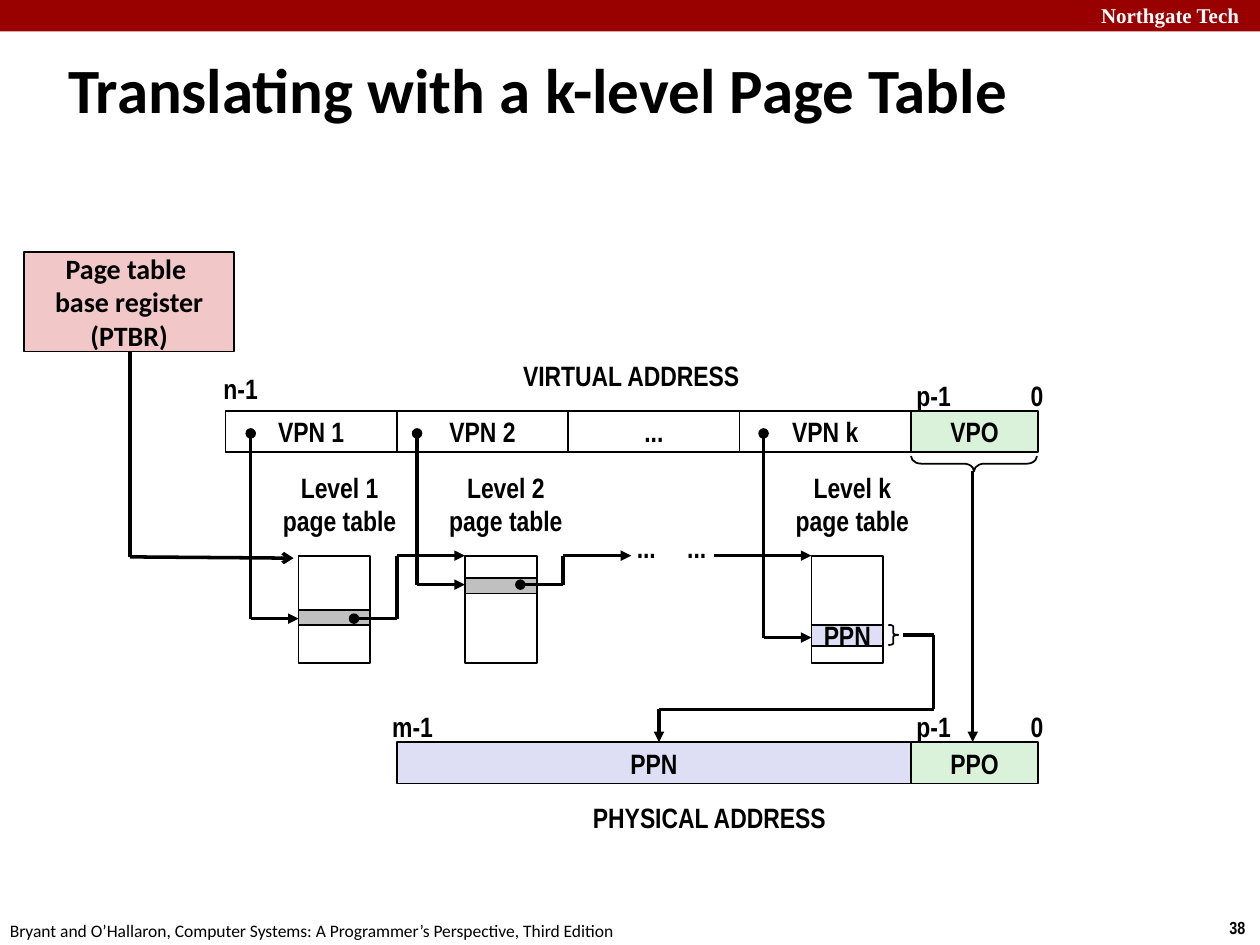
from lxml import etree
from pptx import Presentation
from pptx.dml.color import RGBColor
from pptx.enum.shapes import MSO_CONNECTOR, MSO_SHAPE
from pptx.enum.text import MSO_ANCHOR, MSO_AUTO_SIZE, PP_ALIGN
from pptx.oxml.ns import qn
from pptx.util import Inches, Pt

RECT, BRACE = MSO_SHAPE.RECTANGLE, MSO_SHAPE.RIGHT_BRACE
STRAIGHT = MSO_CONNECTOR.STRAIGHT
LEFT, CENTER = PP_ALIGN.LEFT, PP_ALIGN.CENTER
TOP, MIDDLE = MSO_ANCHOR.TOP, MSO_ANCHOR.MIDDLE
GROW, FIXED = MSO_AUTO_SIZE.SHAPE_TO_FIT_TEXT, MSO_AUTO_SIZE.NONE
TITLE_ONLY = 5

BLACK = RGBColor(0x00, 0x00, 0x00)
WHITE = RGBColor(0xFF, 0xFF, 0xFF)
RED = RGBColor(0x99, 0x00, 0x00)
PINK = RGBColor(0xF1, 0xC7, 0xC7)
GREEN = RGBColor(0xDB, 0xF2, 0xDA)
LILAC = RGBColor(0xDE, 0xDF, 0xF5)
GRAY = RGBColor(0xC0, 0xC0, 0xC0)

BODY, LABEL, SERIF = "Calibri", "Arial Narrow", "Times New Roman"
COLS, ROWS = 100, 75  # square grid cells, a tenth of an inch each


class Diagram:
    """Draws styled elements; every length is in grid columns and rows."""

    def __init__(self, prs):
        self.cell_w = prs.slide_width / COLS
        self.cell_h = prs.slide_height / ROWS
        self.s = prs.slides.add_slide(prs.slide_layouts[TITLE_ONLY])

    def x(self, col):
        return round(col * self.cell_w)

    def y(self, row):
        return round(row * self.cell_h)

    def area(self, col, row, w, h):
        return self.x(col), self.y(row), self.x(w), self.y(h)

    def add_runs(self, tf, text, font=LABEL, size=16, bold=True, color=BLACK,
                 align=CENTER):
        """A newline starts a paragraph, a vertical tab breaks the line."""
        for i, para in enumerate(text.split("\n")):
            p = tf.add_paragraph() if i else tf.paragraphs[0]
            p.alignment = align
            for j, line in enumerate(para.split("\v")):
                if j:
                    p.add_line_break()
                r = p.add_run()
                r.text = line
                r.font.name, r.font.size = font, Pt(size)
                r.font.bold, r.font.color.rgb = bold, color

    def title(self, area, text):
        sp = self.s.shapes.title
        sp.left, sp.top, sp.width, sp.height = self.area(*area)
        tf = sp.text_frame
        tf.vertical_anchor, tf.auto_size = MIDDLE, FIXED
        self.add_runs(tf, text, BODY, 36, align=LEFT)
        pPr = tf.paragraphs[0]._p.get_or_add_pPr()
        pPr.set("marL", str(Inches(0.13)))
        pPr.set("indent", str(-Inches(0.13)))

    def text(self, area, text, wrap=False, anchor=MIDDLE, **style):
        tf = self.s.shapes.add_textbox(*self.area(*area)).text_frame
        tf.word_wrap, tf.auto_size = wrap, GROW
        tf.vertical_anchor = anchor
        self.add_runs(tf, text, **style)

    def box(self, area, text="", fill=None, line=BLACK, wrap=False, **style):
        sp = self.shape(RECT, area, fill, line)
        if text:
            tf = sp.text_frame
            tf.word_wrap, tf.vertical_anchor = wrap, MIDDLE
            self.add_runs(tf, text, **style)

    def shape(self, kind, area, fill=None, line=BLACK):
        sp = self.s.shapes.add_shape(kind, *self.area(*area))
        sp.shadow.inherit = False
        if fill is None:
            sp.fill.background()
        else:
            sp.fill.solid()
            sp.fill.fore_color.rgb = fill
        if line is None:
            sp.line.fill.background()
        else:
            sp.line.color.rgb, sp.line.width = line, Pt(1)
        return sp

    def brace(self, area, curve, rotation=0):
        sp = self.shape(BRACE, area)
        sp.adjustments[0], sp.adjustments[1] = curve, 0.5
        sp.rotation = rotation

    def route(self, *points, head=None, tail="triangle"):
        """Straight legs through the points, with ends on the outer two."""
        last = len(points) - 2
        for i, (a, b) in enumerate(zip(points, points[1:])):
            c = self.s.shapes.add_connector(
                STRAIGHT, self.x(a[0]), self.y(a[1]), self.x(b[0]), self.y(b[1]))
            c.line.color.rgb, c.line.width = BLACK, Pt(2)
            spPr = c.element.spPr
            ln = spPr.find(qn("a:ln"))
            if head and i == 0:
                etree.SubElement(ln, qn("a:headEnd"), type=head)
            if tail and i == last:
                etree.SubElement(ln, qn("a:tailEnd"), type=tail)
            etree.SubElement(spPr, qn("a:effectLst"))


def main():
    prs = Presentation()
    prs.slide_width, prs.slide_height = Inches(10), Inches(7.5)
    d = Diagram(prs)

    # Header band, footer and title
    d.box((0, 0, COLS, 2.5), fill=RED, line=None)
    d.text((86.4, -0.3, 14.3, 3), "Northgate Tech", wrap=True, anchor=TOP,
           font=SERIF, size=12, color=WHITE, align=LEFT)
    d.text((96.6, 72.3, 3.4, 2.7), "38", anchor=TOP, size=10, align=LEFT)
    d.text((-0.2, 72.5, 50.8, 2.7),
           "Bryant and O’Hallaron, Computer Systems: "
           "A Programmer’s Perspective, Third Edition",
           anchor=TOP, font=BODY, size=10, bold=False, align=LEFT)
    d.title((4.4, 2.7, 90.6, 8.6), "Translating with a k-level Page Table")

    # Base register, pointing at the first table
    d.box((1.9, 20, 16.7, 7.9), "Page table \vbase register\n(PTBR)",
          PINK, wrap=True, font=BODY)
    d.route((10.3, 27.9), (10.3, 44.2), (23.3, 44.3), tail="arrow")

    # Virtual and physical address fields
    field_w, field_h = 13.6, 3.3
    va, pa = 32.6, 58.9
    offset, offset_w = 72.3, 10.1
    for i, name in enumerate(["VPN 1", "VPN 2", "...", "VPN k"]):
        d.box((offset - (4 - i) * field_w, va, field_w, field_h), name)
    d.box((31.5, pa, offset - 31.5, field_h), "PPN", LILAC)
    for row, name in [(va, "VPO"), (pa, "PPO")]:
        d.box((offset, row, offset_w, field_h), name, GREEN)
        d.text((71.7, row - 3.1, 4.8, 3.7), "p-1")
        d.text((80.8, row - 3.1, 3, 3.7), "0")
    d.text((16.7, 29, 4.8, 3.7), "n-1")
    d.text((30.1, pa - 3.1, 5.3, 3.7), "m-1")
    d.text((40.4, 27.9, 19.4, 3.7), "VIRTUAL ADDRESS")
    d.text((45.9, 63, 20.8, 3.7), "PHYSICAL ADDRESS")

    # Page tables, each indexed by its VPN
    table_top, table_w, table_h = 44.1, 5.7, 8.5
    tables = [  # level, left, entry top, entry height, index row, text, fill
        ("1", 23.7, 48.4, 1.2, 49.1, "", GRAY),
        ("2", 36.9, 45.9, 1.2, 46.4, "", GRAY),
        ("k", 64.4, 49.6, 1.7, 50.6, "PPN", LILAC),
    ]
    for level, left, entry, entry_h, index, name, fill in tables:
        d.box((left, table_top, table_w, table_h))
        d.box((left, entry, table_w, entry_h), name, fill)
        d.text((left - 2.3, 36.8, 11.1, 6.4), f"Level {level}\npage table")
        d.route((left - 3.8, 34.4), (left - 3.8, index), (left, index),
                head="oval")

    # Links from each entry to the next table
    for _, left, _, _, index, name, _ in tables:
        if not name:
            bend = left + 7.8
            d.route((left + 4.4, index), (bend, index), (bend, table_top),
                    (bend + 5.4, table_top), head="oval")
    for col in (49.5, 53.5):
        d.text((col, 41.6, 3.6, 3.7), "...")
    d.route((56.7, table_top), (64.4, table_top))

    # Results carried down to the physical address
    d.brace((76.7, 31.8, 1.2, 10), 0.68, rotation=90)
    d.route((77.2, 37.4), (77.2, pa))
    d.brace((70.5, 49.6, 0.8, 1.6), 0.16)
    d.route((71.7, 50.4), (74.1, 50.4), (74.1, 56.3), (52.3, 56.3), (52.3, pa))

    prs.save("out.pptx")


if __name__ == "__main__":
    main()
